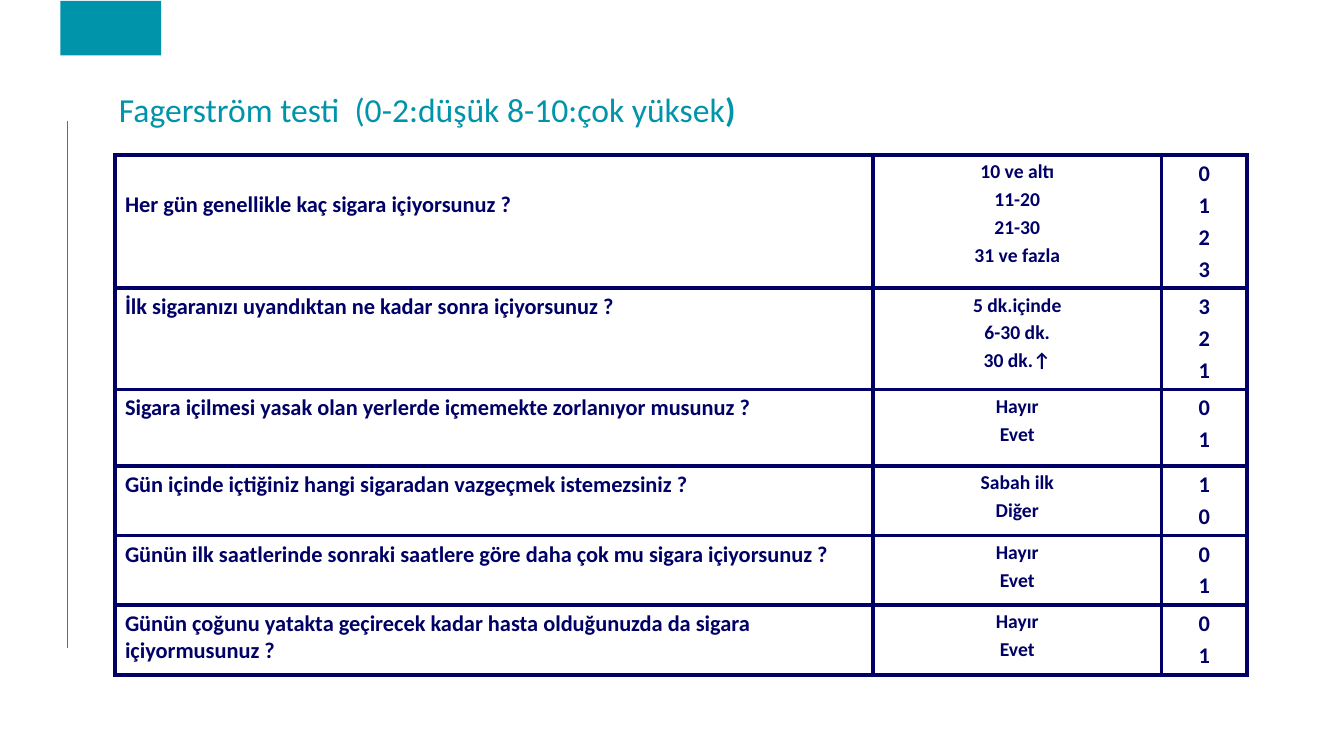
from lxml import etree
from pptx import Presentation, util as u
from pptx.dml.color import RGBColor
from pptx.enum import shapes, text
from pptx.oxml import ns

TEAL = RGBColor(0x00, 0x94, 0xAB)
NAVY = RGBColor(0x00, 0x00, 0x66)
WHITE = RGBColor(0xFF, 0xFF, 0xFF)
FONT = "Calibri"
WIDE, HIGH = u.Inches(13.33), u.Inches(7.5)

COLS = (66.96, 25.47, 7.57)
ROWS = (25.63, 19.42, 14.75, 13.4, 13.4, 13.4)
SIZES = (16, 14, 16)
TESTS = (
    ("Her gün genellikle kaç sigara içiyorsunuz ?",
     "10 ve altı\n11-20\n21-30\n31 ve fazla", "0\n1\n2\n3"),
    ("İlk sigaranızı uyandıktan ne kadar sonra içiyorsunuz ?",
     "5 dk.içinde\n6-30 dk.\n30 dk.↑", "3\n2\n1"),
    ("Sigara içilmesi yasak olan yerlerde içmemekte zorlanıyor musunuz ?",
     "Hayır\nEvet", "0\n1"),
    ("Gün içinde içtiğiniz hangi sigaradan vazgeçmek istemezsiniz ?",
     "Sabah ilk\nDiğer", "1\n0"),
    ("Günün ilk saatlerinde sonraki saatlere göre daha çok mu sigara içiyorsunuz ?",
     "Hayır\nEvet", "0\n1"),
    ("Günün çoğunu yatakta geçirecek kadar hasta olduğunuzda da sigara içiyormusunuz ?",
     "Hayır\nEvet", "0\n1"),
)


def part(total, share):
    return int(total * share / 100)


def area(left, top, width, height):
    return (part(WIDE, left), part(HIGH, top),
            part(WIDE, width), part(HIGH, height))


def style(font, size, color, bold):
    font.name, font.size, font.bold = FONT, u.Pt(size), bold
    font.color.rgb = color


def add_rule(slide, box):
    left, top, width, height = box
    rule = slide.shapes.add_connector(
        shapes.MSO_CONNECTOR.STRAIGHT, left, top, left + width, top + height)
    rule.line.color.rgb = TEAL
    rule.line.width = u.Pt(1)
    etree.SubElement(rule.element.spPr, ns.qn("a:effectLst"))


def add_tab(slide, box):
    tab = slide.shapes.add_shape(shapes.MSO_SHAPE.RECTANGLE, *box)
    tab.shadow.inherit = False
    tab.fill.solid()
    tab.fill.fore_color.rgb = TEAL
    tab.line.fill.background()


def add_title(slide, box):
    title = slide.shapes.title
    title.left, title.top, title.width, title.height = box
    frame = title.text_frame
    frame.auto_size = text.MSO_AUTO_SIZE.NONE
    frame.vertical_anchor = text.MSO_ANCHOR.MIDDLE
    frame.text = "Fagerström testi  (0-2:düşük 8-10:çok yüksek"
    para = frame.paragraphs[0]
    para.alignment = text.PP_ALIGN.LEFT
    para.line_spacing = 0.9
    para.add_run().text = ")"
    for run, bold in zip(para.runs, (False, True)):
        style(run.font, 24, TEAL, bold)


def add_edges(cell):
    props = cell._tc.get_or_add_tcPr()
    for place, side in enumerate("LRTB"):
        edge = etree.Element(ns.qn("a:ln" + side), w=str(u.Pt(3)))
        fill = etree.SubElement(edge, ns.qn("a:solidFill"))
        etree.SubElement(fill, ns.qn("a:srgbClr"), val=str(NAVY))
        props.insert(place, edge)


def fill_cell(cell, words, size, align):
    cell.fill.solid()
    cell.fill.fore_color.rgb = WHITE
    add_edges(cell)
    cell.text_frame.text = words
    for place, para in enumerate(cell.text_frame.paragraphs):
        para.alignment = align
        if place:
            para.space_before = u.Pt(size * 0.2)
        for run in para.runs:
            style(run.font, size, NAVY, True)


def add_test(slide, box):
    table = slide.shapes.add_table(len(ROWS), len(COLS), *box).table
    table.first_row = table.horz_banding = False
    for col, share in zip(table.columns, COLS):
        col.width = part(box[2], share)
    for row, share in zip(table.rows, ROWS):
        row.height = part(box[3], share)
    aligns = (text.PP_ALIGN.LEFT, text.PP_ALIGN.CENTER, text.PP_ALIGN.CENTER)
    for row, words in zip(table.rows, TESTS):
        for cell, word, size, align in zip(row.cells, words, SIZES, aligns):
            fill_cell(cell, word, size, align)
    table.cell(0, 0).margin_top = part(box[3], 7)


def main():
    deck = Presentation()
    deck.slide_width, deck.slide_height = WIDE, HIGH
    slide = deck.slides.add_slide(deck.slide_layouts[5])
    add_rule(slide, area(5.03, 16, 0, 69.73))
    add_tab(slide, area(4.5, 0.13, 7.5, 7.2))
    add_test(slide, area(8.55, 20.53, 84.25, 68.67))
    add_title(slide, area(8.1, 11.07, 91, 7.33))
    deck.save("out.pptx")


if __name__ == "__main__":
    main()
